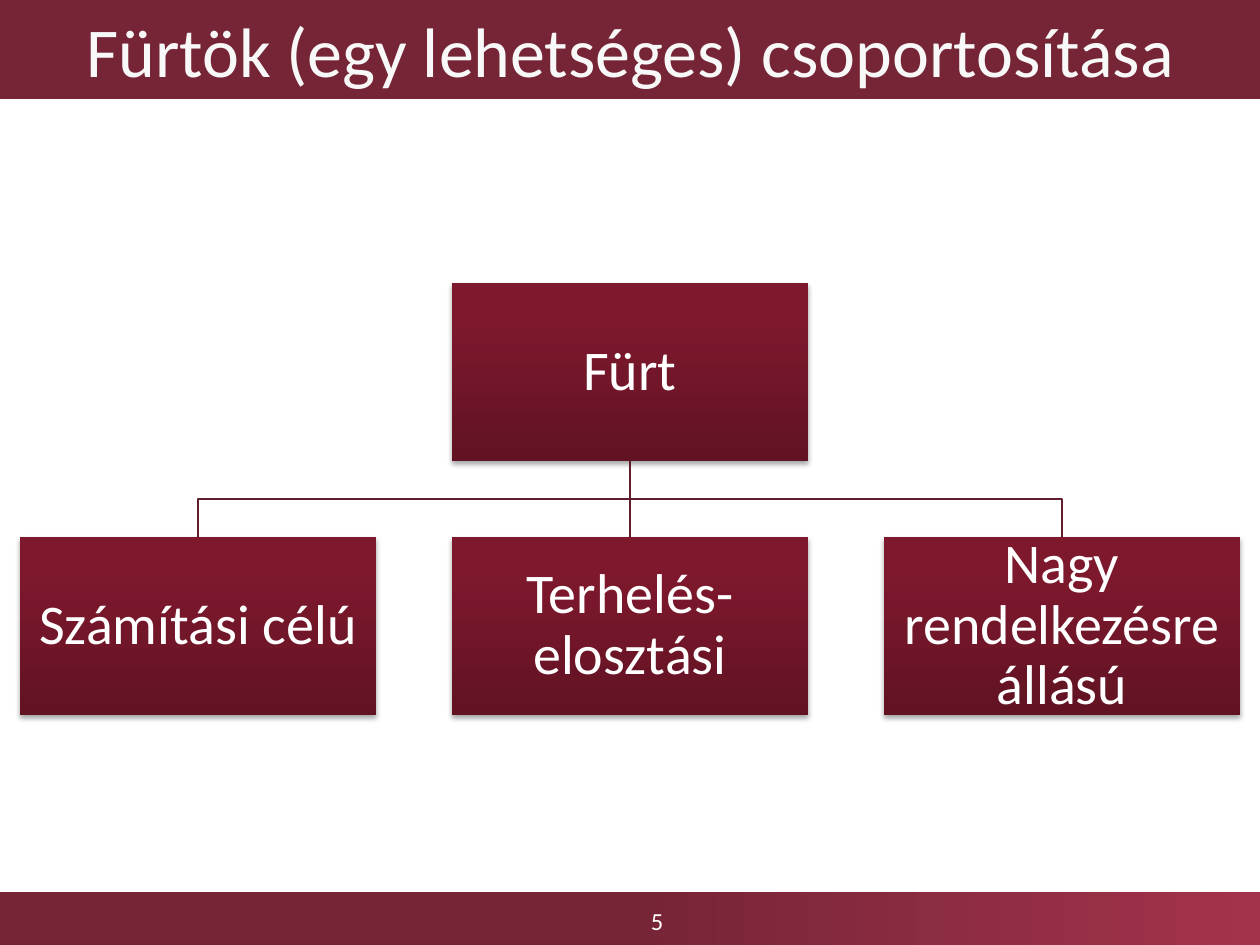
from lxml import etree
from pptx import Presentation
from pptx import util as u
from pptx.dml.color import RGBColor
from pptx.enum import shapes, text
from pptx.oxml import ns

PX = 914400 / 126
FONT = "Calibri"
WHITE = RGBColor(0xFF, 0xFF, 0xFF)
TITLE_TEXT = RGBColor(0xF8, 0xF8, 0xF8)
BAND = RGBColor(0x76, 0x25, 0x36)
BAND_END = RGBColor(0xA3, 0x33, 0x4B)
BOX_DARK = RGBColor(0x61, 0x13, 0x23)
BOX_MIDDLE = RGBColor(0x7E, 0x18, 0x2D)
BOX_LIGHT = RGBColor(0x81, 0x16, 0x2D)
LINE = RGBColor(0x5E, 0x1E, 0x2B)
SHADOW = RGBColor(0, 0, 0)

SLIDE_WIDTH, SLIDE_HEIGHT = 1260, 945
BOX_WIDTH, BOX_HEIGHT = 356, 178
BOX_STEP = 432
ROOT_TOP, CHILD_TOP = 283, 537
CENTRE = SLIDE_WIDTH // 2
CHILDREN = ["Számítási célú", "Terhelés-elosztási", "Nagy rendelkezésre állású"]


def px(*lengths):
    return [u.Emu(round(length * PX)) for length in lengths]


def add_element(parent, tag, **attributes):
    return etree.SubElement(parent, ns.qn(tag), **attributes)


def write_text(shape, content, size, color=WHITE, inset=None, line_spacing=None):
    frame = shape.text_frame
    frame.word_wrap = True
    frame.vertical_anchor = text.MSO_ANCHOR.MIDDLE
    if inset is not None:
        frame.margin_left = frame.margin_right = u.Inches(inset)
        frame.margin_top = frame.margin_bottom = u.Inches(inset)
    paragraph = frame.paragraphs[0]
    paragraph.alignment = text.PP_ALIGN.CENTER
    paragraph.line_spacing = line_spacing
    run = paragraph.add_run()
    run.text = content
    run.font.name = FONT
    run.font.size = u.Pt(size)
    run.font.color.rgb = color


def fill_gradient(shape, stops, angle):
    """Fill with (percent, colour) stops; the angle runs counter-clockwise."""
    shape.fill.gradient()
    shape.fill.gradient_angle = angle
    stop_list = shape._element.spPr.find(".//" + ns.qn("a:gsLst"))
    for stop in list(stop_list):
        stop_list.remove(stop)
    for percent, color in stops:
        stop = add_element(stop_list, "a:gs", pos=str(percent * 1000))
        add_element(stop, "a:srgbClr", val=str(color))


def add_rectangle(slide, left, top, width, height, stops, angle):
    shape = slide.shapes.add_shape(
        shapes.MSO_SHAPE.RECTANGLE, *px(left, top, width, height))
    shape.shadow.inherit = False
    shape.line.fill.background()
    fill_gradient(shape, stops, angle)
    return shape


def add_drop_shadow(shape):
    effects = shape._element.spPr.find(ns.qn("a:effectLst"))
    shadow = add_element(effects, "a:outerShdw", blurRad="40000", dist="23000",
                         dir="5400000", rotWithShape="0")
    color = add_element(shadow, "a:srgbClr", val=str(SHADOW))
    add_element(color, "a:alpha", val="35000")


def add_box(slide, centre, top, label):
    stops = [(0, BOX_DARK), (80, BOX_MIDDLE), (100, BOX_LIGHT)]
    box = add_rectangle(slide, centre - BOX_WIDTH // 2, top,
                        BOX_WIDTH, BOX_HEIGHT, stops, 90)
    add_drop_shadow(box)
    write_text(box, label, 32, inset=0.02, line_spacing=0.9)
    return box


def format_line(shape):
    shape.line.color.rgb = LINE
    shape.line.width = u.Pt(0.75)


def add_branch(slide, centre):
    """Draw the right-angled line from the root to an outer child."""
    start = ROOT_TOP + BOX_HEIGHT
    middle = (start + CHILD_TOP) // 2
    builder = slide.shapes.build_freeform(CENTRE, start, scale=PX)
    builder.add_line_segments(
        [(CENTRE, middle), (centre, middle), (centre, CHILD_TOP)], close=False)
    branch = builder.convert_to_shape()
    branch.shadow.inherit = False
    branch.fill.background()
    format_line(branch)


def add_straight_link(slide, upper, lower):
    link = slide.shapes.add_connector(shapes.MSO_CONNECTOR.STRAIGHT, 0, 0, 0, 0)
    link.begin_connect(upper, 2)
    link.end_connect(lower, 0)
    add_element(link._element.spPr, "a:effectLst")
    format_line(link)


def add_title(slide, content):
    title = slide.shapes.title
    title.left, title.top, title.width, title.height = px(0, 0, SLIDE_WIDTH, 99)
    title.fill.solid()
    title.fill.fore_color.rgb = BAND
    write_text(title, content, 40, color=TITLE_TEXT)


def add_footer(slide, number):
    add_rectangle(slide, 0, 892, SLIDE_WIDTH, 53,
                  [(0, BAND), (50, BAND), (100, BAND_END)], 0)
    box = slide.shapes.add_textbox(*px(452, 896, 410, 49))
    write_text(box, number, 14)


def add_hierarchy(slide):
    centres = [CENTRE + (column - 1) * BOX_STEP for column in range(len(CHILDREN))]
    for centre in (centres[0], centres[-1]):
        add_branch(slide, centre)
    root = add_box(slide, CENTRE, ROOT_TOP, "Fürt")
    boxes = [add_box(slide, centre, CHILD_TOP, label)
             for centre, label in zip(centres, CHILDREN)]
    add_straight_link(slide, root, boxes[1])


def main():
    presentation = Presentation()
    presentation.slide_width, presentation.slide_height = px(SLIDE_WIDTH, SLIDE_HEIGHT)
    slide = presentation.slides.add_slide(presentation.slide_layouts[5])
    add_footer(slide, "5")
    add_title(slide, "Fürtök (egy lehetséges) csoportosítása")
    add_hierarchy(slide)
    presentation.save("out.pptx")


if __name__ == "__main__":
    main()
